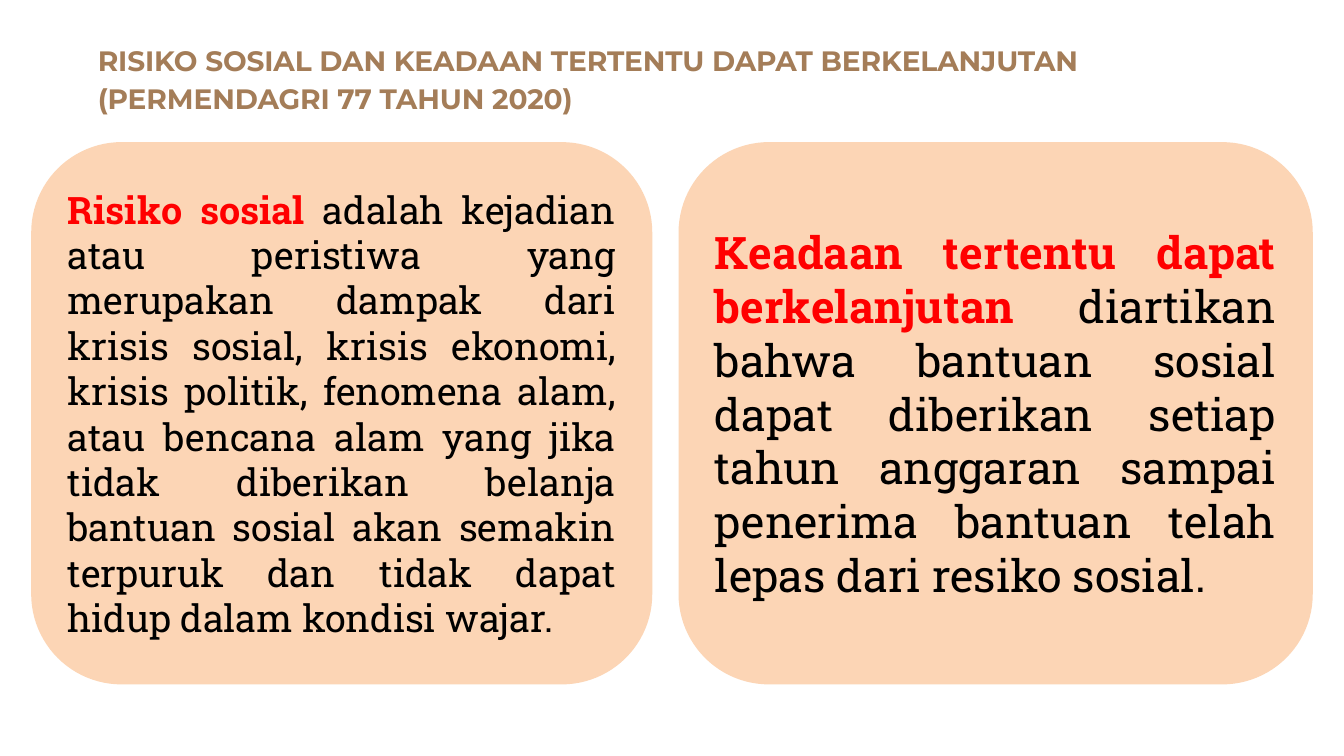
"""Build a slide defining social risk and continuing circumstances."""
from pptx import Presentation
from pptx import util as u
from pptx.dml.color import RGBColor
from pptx.enum import shapes, text

COLOURS = {"title": "A47D58", "panel": "FCD5B5", "term": "FF0000", "body": "000000"}
TITLE_LINES = [
    "RISIKO SOSIAL DAN KEADAAN TERTENTU DAPAT BERKELANJUTAN",
    "(PERMENDAGRI 77 TAHUN 2020)",
]
PANELS = [
    (0.31, 6.16, 27, "Risiko sosial ",
     "adalah kejadian atau peristiwa yang merupakan dampak dari krisis sosial, "
     "krisis ekonomi, krisis politik, fenomena alam, atau bencana alam yang jika "
     "tidak diberikan belanja bantuan sosial akan semakin terpuruk dan tidak dapat "
     "hidup dalam kondisi wajar."),
    (6.73, 6.29, 32, "Keadaan tertentu dapat berkelanjutan ",
     "diartikan bahwa bantuan sosial dapat diberikan setiap tahun anggaran sampai "
     "penerima bantuan telah lepas dari resiko sosial."),
]


def format_run(run, font_name, size, colour, bold):
    run.font.name = font_name
    run.font.size = u.Pt(size)
    run.font.bold = bold
    run.font.color.rgb = RGBColor.from_string(COLOURS[colour])


def set_title(slide):
    title = slide.shapes.title
    title.left, title.top = u.Inches(0.96), u.Inches(0.36)
    title.width, title.height = u.Inches(10.76), u.Inches(0.7)
    frame = title.text_frame
    frame.text = "\n".join(TITLE_LINES)
    frame.word_wrap = True
    frame.auto_size = text.MSO_AUTO_SIZE.NONE
    frame.vertical_anchor = text.MSO_ANCHOR.TOP
    frame.margin_left = frame.margin_right = frame.margin_bottom = 0
    frame.margin_top = u.Inches(0.02)
    for paragraph in frame.paragraphs:
        paragraph.alignment = text.PP_ALIGN.LEFT
        paragraph.line_spacing = u.Pt(27.5)
        paragraph.space_before = u.Pt(0)
        paragraph._p.get_or_add_pPr().set("marL", str(u.Inches(0.01)))
        for run in paragraph.runs:
            format_run(run, "Montserrat", 20, "title", True)
            run._r.get_or_add_rPr().set("spc", "-10")


def add_panel(slide, left, width, size, term, definition):
    panel = slide.shapes.add_shape(
        shapes.MSO_SHAPE.ROUNDED_RECTANGLE,
        u.Inches(left), u.Inches(1.41), u.Inches(width), u.Inches(5.38))
    panel.shadow.inherit = False
    panel.fill.solid()
    panel.fill.fore_color.rgb = RGBColor.from_string(COLOURS["panel"])
    panel.line.fill.background()
    frame = panel.text_frame
    frame.word_wrap = True
    frame.vertical_anchor = text.MSO_ANCHOR.MIDDLE
    paragraph = frame.paragraphs[0]
    paragraph.alignment = text.PP_ALIGN.JUSTIFY
    for words, colour, bold in ((term, "term", True), (definition, "body", False)):
        run = paragraph.add_run()
        run.text = words
        format_run(run, "Roboto Slab", size, colour, bold)


def main():
    presentation = Presentation()
    presentation.slide_width = u.Inches(13.33)
    presentation.slide_height = u.Inches(7.5)
    slide = presentation.slides.add_slide(presentation.slide_layouts.get_by_name("Title Only"))
    set_title(slide)
    for panel in PANELS:
        add_panel(slide, *panel)
    presentation.save("out.pptx")


if __name__ == "__main__":
    main()
